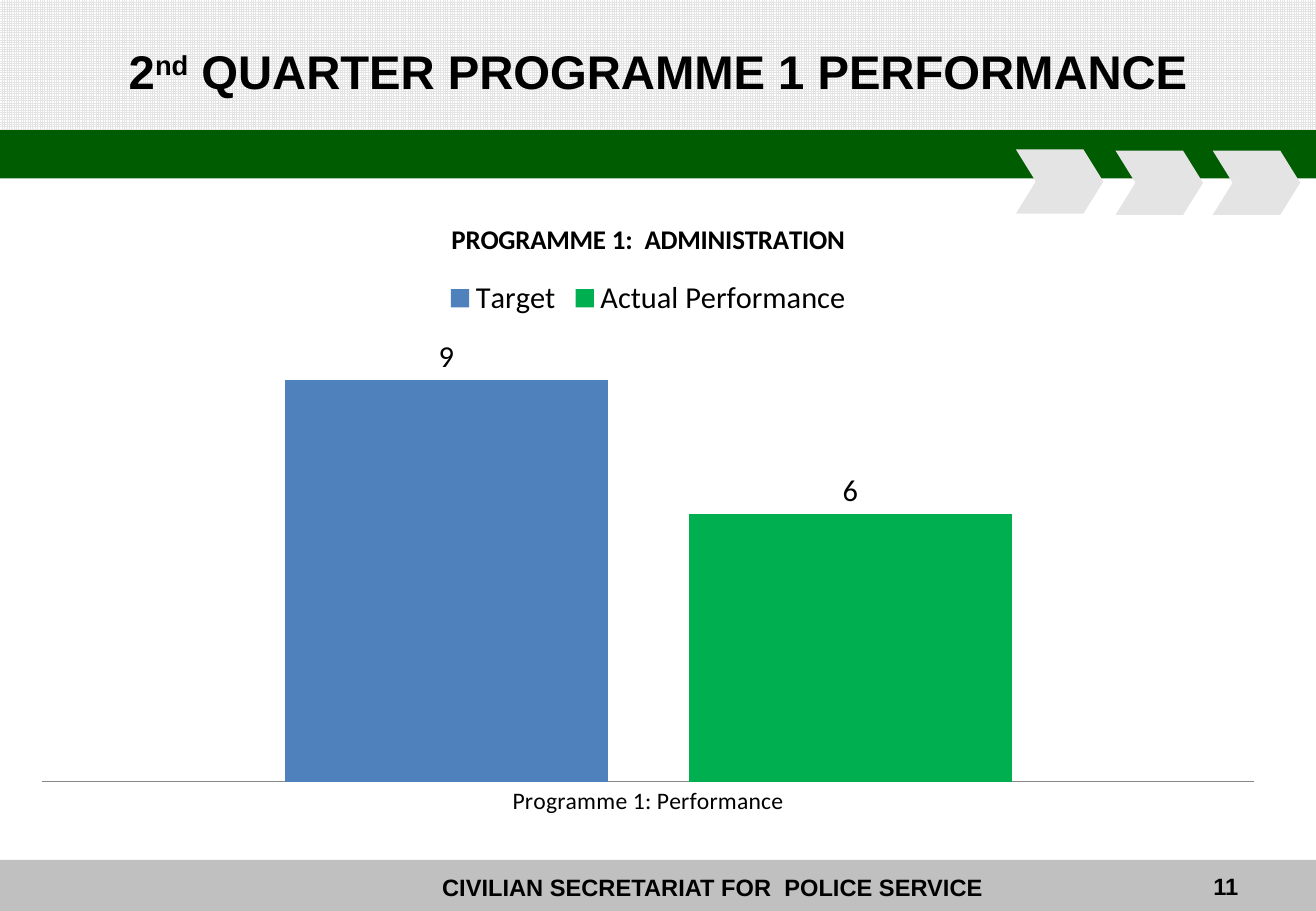
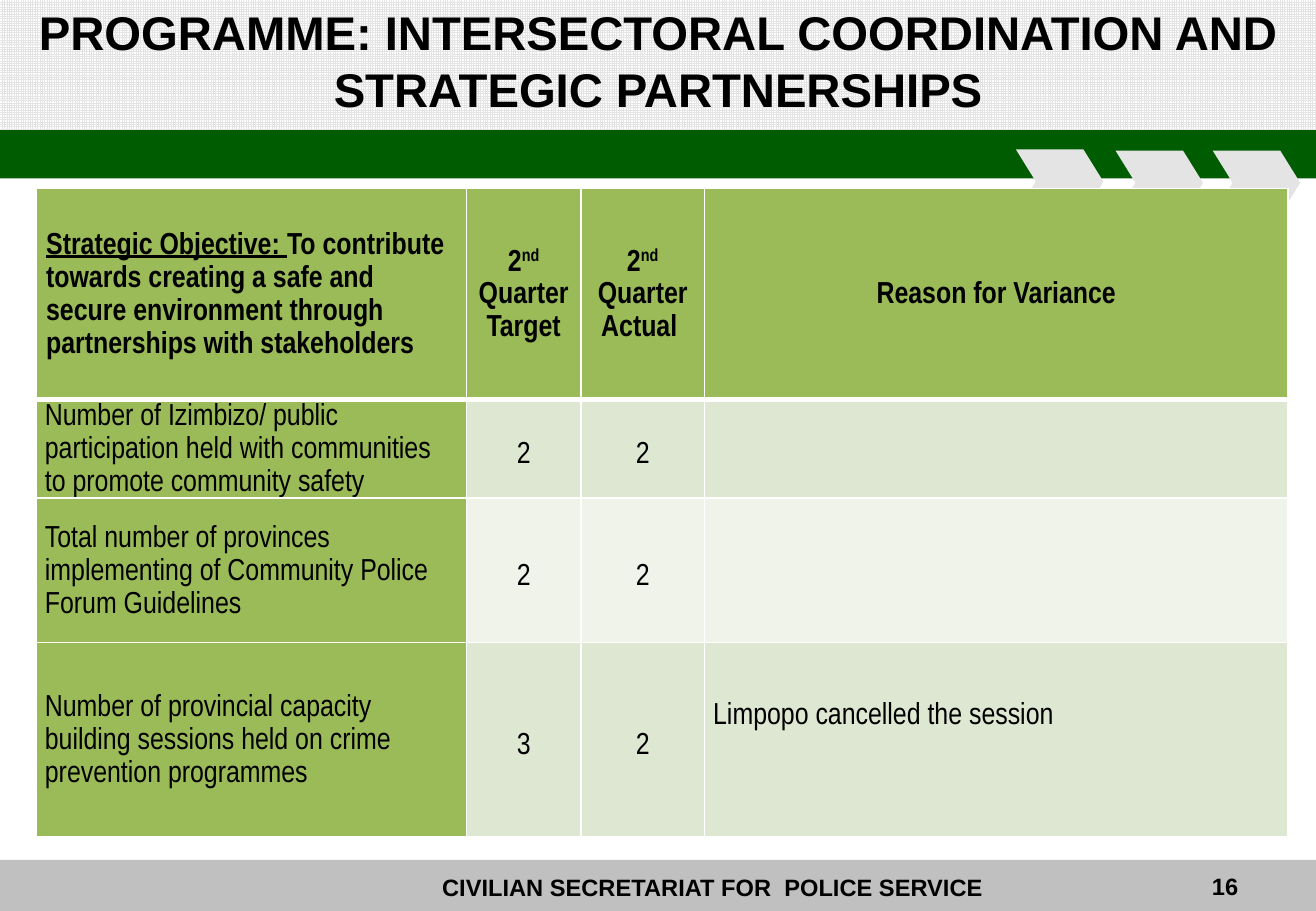
from dataclasses import dataclass

from lxml.etree import SubElement
from pptx import Presentation
from pptx.chart.data import CategoryChartData
from pptx.dml.color import RGBColor
from pptx.enum.chart import XL_CHART_TYPE as ChartType
from pptx.enum.chart import XL_LABEL_POSITION as LabelPosition
from pptx.enum.chart import XL_LEGEND_POSITION as LegendPosition
from pptx.enum.chart import XL_TICK_LABEL_POSITION as TickLabelPosition
from pptx.enum.chart import XL_TICK_MARK as TickMark
from pptx.enum.dml import MSO_PATTERN as Pattern
from pptx.enum.shapes import MSO_SHAPE as ShapeType
from pptx.enum.text import MSO_ANCHOR as Anchor
from pptx.enum.text import MSO_AUTO_SIZE as AutoSize
from pptx.enum.text import PP_ALIGN as Align
from pptx.oxml.ns import qn
from pptx.util import Inches, Pt

BLACK = RGBColor(0x00, 0x00, 0x00)
WHITE = RGBColor(0xFF, 0xFF, 0xFF)
SILVER = RGBColor(0xC0, 0xC0, 0xC0)
PALE_GREY = RGBColor(0xE4, 0xE4, 0xE4)
AXIS_GREY = RGBColor(0x87, 0x87, 0x87)
DARK_GREEN = RGBColor(0x00, 0x5C, 0x00)
OLIVE = RGBColor(0x9B, 0xBB, 0x59)
OLIVE_TINT = RGBColor(0xDE, 0xE7, 0xD1)
OLIVE_PALE = RGBColor(0xEF, 0xF3, 0xEA)
BLUE = RGBColor(0x4F, 0x81, 0xBD)
BRIGHT_GREEN = RGBColor(0x00, 0xB0, 0x50)

SLIDE_WIDTH = 10.83
SLIDE_HEIGHT = 7.5


@dataclass(frozen=True)
class Box:
    left: float
    top: float
    width: float
    height: float

    def lengths(self) -> tuple:
        return tuple(Inches(value) for value in
                     (self.left, self.top, self.width, self.height))


@dataclass(frozen=True)
class Part:
    kind: ShapeType
    box: Box
    color: RGBColor
    patterned: bool = False


@dataclass(frozen=True)
class TextRun:
    text: str
    superscript: bool = False
    underline: bool = False


@dataclass(frozen=True)
class TextStyle:
    size: float
    font: str = "Arial"
    bold: bool = True


@dataclass(frozen=True)
class Series:
    name: str
    value: int
    color: RGBColor


@dataclass(frozen=True)
class Indicator:
    name: str
    target: str
    actual: str
    reason: str = ""


TITLE_STYLE = TextStyle(28)
FOOTER_STYLE = TextStyle(14)
HEADER_STYLE = TextStyle(18, "Arial Narrow")
CELL_STYLE = TextStyle(18, "Arial Narrow", False)

CHEVRONS = [Part(ShapeType.CHEVRON, Box(left, top, 0.72, 0.53), PALE_GREY)
            for left, top in ((9.18, 1.24), (9.98, 1.24), (8.36, 1.23))]
BANDS = [
    Part(ShapeType.RECTANGLE, Box(0, 7.08, SLIDE_WIDTH, 0.42), SILVER),
    Part(ShapeType.RECTANGLE, Box(0, 1.07, SLIDE_WIDTH, 0.4), DARK_GREEN),
    *CHEVRONS,
    Part(ShapeType.RECTANGLE, Box(0, 0, SLIDE_WIDTH, 1.07), PALE_GREY, True),
]
SERIES = [Series("Target", 9, BLUE),
          Series("Actual Performance", 6, BRIGHT_GREEN)]

COLUMN_WIDTHS = (3.54, 0.94, 1.02, 4.8)
ROW_HEIGHTS = (1.74, 0.79, 1.19, 1.6)
HEADERS = [
    [TextRun("Strategic Objective: ", underline=True),
     TextRun("To contribute towards creating a safe and secure environment "
             "through partnerships with stakeholders")],
    [TextRun("2"), TextRun("nd ", True), TextRun("Quarter Target")],
    [TextRun("2"), TextRun("nd ", True), TextRun("Quarter Actual ")],
    [TextRun("Reason for Variance")],
]
INDICATORS = [
    Indicator("Number of Izimbizo/ public participation held with "
              "communities to promote community safety", "2", "2"),
    Indicator("Total number of provinces implementing of Community Police "
              "Forum Guidelines", "2", "2"),
    Indicator("Number of provincial capacity building sessions held on crime "
              "prevention programmes", "3", "2",
              "Limpopo cancelled the session"),
]


def add_runs(paragraph, runs: list[TextRun], style: TextStyle) -> None:
    for item in runs:
        run = paragraph.add_run()
        run.text = item.text
        run.font.name = style.font
        run.font.size = Pt(style.size)
        run.font.bold = style.bold
        run.font.color.rgb = BLACK
        if item.underline:
            run.font.underline = True
        if item.superscript:
            run._r.get_or_add_rPr().set("baseline", "30000")


def add_part(slide, part: Part):
    shape = slide.shapes.add_shape(part.kind, *part.box.lengths())
    shape.shadow.inherit = False
    shape.line.fill.background()
    if part.patterned:
        shape.fill.patterned()
        shape.fill.pattern = Pattern.SMALL_GRID
        shape.fill.fore_color.rgb = part.color
        shape.fill.back_color.rgb = WHITE
    else:
        shape.fill.solid()
        shape.fill.fore_color.rgb = part.color
    if part.kind == ShapeType.CHEVRON:
        shape.adjustments[0] = 0.31
    return shape


def add_text(slide, box: Box, text: str, align: Align, wrap: bool):
    shape = slide.shapes.add_textbox(*box.lengths())
    frame = shape.text_frame
    frame.word_wrap = wrap
    frame.auto_size = AutoSize.NONE if wrap else AutoSize.SHAPE_TO_FIT_TEXT
    paragraph = frame.paragraphs[0]
    paragraph.alignment = align
    add_runs(paragraph, [TextRun(text)], FOOTER_STYLE)
    return shape


def furnish_layout(layout, slide) -> None:
    for placeholder in list(layout.placeholders):
        if placeholder.placeholder_format.idx != 0:
            placeholder.element.getparent().remove(placeholder.element)
    shapes = [add_part(slide, part) for part in BANDS]
    shapes.append(add_text(slide, Box(3.54, 7.14, 4.72, 0.34),
                           "CIVILIAN SECRETARIAT FOR  POLICE SERVICE",
                           Align.LEFT, False))
    for shape in shapes:
        layout.element.cSld.spTree.append(shape.element)


def set_title(slide, box: Box, runs: list[TextRun]) -> None:
    title = slide.shapes.title
    title.left, title.top, title.width, title.height = box.lengths()
    frame = title.text_frame
    frame.word_wrap = True
    frame.auto_size = AutoSize.NONE
    frame.vertical_anchor = Anchor.TOP
    frame.margin_top = Inches(0.09)
    paragraph = frame.paragraphs[0]
    paragraph.alignment = Align.CENTER
    add_runs(paragraph, runs, TITLE_STYLE)


def add_page_number(slide, number: str) -> None:
    add_text(slide, Box(7.76, 7.13, 2.53, 0.4), number, Align.RIGHT, True)


def add_performance_chart(slide) -> None:
    data = CategoryChartData()
    data.categories = ["Programme 1: Performance"]
    for item in SERIES:
        data.add_series(item.name, [item.value])
    chart = slide.shapes.add_chart(ChartType.COLUMN_CLUSTERED,
                                   *Box(0.14, 1.62, 10.39, 5.2).lengths(),
                                   data).chart
    chart.font.name = "Calibri"
    chart.font.size = Pt(10)
    chart.font.color.rgb = BLACK

    chart.has_title = True
    paragraph = chart.chart_title.text_frame.paragraphs[0]
    add_runs(paragraph, [TextRun("PROGRAMME 1:  ADMINISTRATION")],
             TextStyle(16, "Calibri"))
    chart.chart_title.include_in_layout = False

    chart.has_legend = True
    chart.legend.position = LegendPosition.TOP
    chart.legend.include_in_layout = False
    chart.legend.font.size = Pt(18)

    chart.value_axis.visible = False
    chart.value_axis.has_major_gridlines = False
    chart.value_axis.minimum_scale = 0
    chart.value_axis.maximum_scale = 10
    category_axis = chart.category_axis
    category_axis.major_tick_mark = TickMark.NONE
    category_axis.tick_label_position = TickLabelPosition.NEXT_TO_AXIS
    category_axis.tick_labels.font.size = Pt(14)
    category_axis.format.line.color.rgb = AXIS_GREY

    plot = chart.plots[0]
    plot.vary_by_categories = False
    plot.gap_width = 150
    plot.overlap = -25
    for series, item in zip(plot.series, SERIES):
        series.format.fill.solid()
        series.format.fill.fore_color.rgb = item.color
        labels = series.data_labels
        labels.show_value = True
        labels.position = LabelPosition.OUTSIDE_END
        labels.font.size = Pt(18)


def set_borders(cell, top: float, bottom: float) -> None:
    properties = cell._tc.get_or_add_tcPr()
    widths = {"a:lnL": 1, "a:lnR": 1, "a:lnT": top, "a:lnB": bottom}
    for index, (tag, width) in enumerate(widths.items()):
        line = SubElement(properties, qn(tag), w=str(Pt(width)))
        fill = SubElement(line, qn("a:solidFill"))
        SubElement(fill, qn("a:srgbClr"), val=str(WHITE))
        properties.insert(index, line)


def fill_cell(cell, runs: list[TextRun], style: TextStyle, color: RGBColor,
              align: Align, spacing: float, inset: float) -> None:
    cell.fill.solid()
    cell.fill.fore_color.rgb = color
    cell.vertical_anchor = Anchor.MIDDLE
    cell.margin_left = cell.margin_right = Inches(inset)
    cell.margin_top = cell.margin_bottom = 0
    paragraph = cell.text_frame.paragraphs[0]
    paragraph.alignment = align
    paragraph.line_spacing = spacing
    paragraph.space_after = Pt(10)
    add_runs(paragraph, runs, style)


def add_indicator_table(slide) -> None:
    box = Box(0.3, 1.55, sum(COLUMN_WIDTHS), sum(ROW_HEIGHTS))
    table = slide.shapes.add_table(len(ROW_HEIGHTS), len(COLUMN_WIDTHS),
                                   *box.lengths()).table
    table.first_row = table.horz_banding = False
    for column, width in zip(table.columns, COLUMN_WIDTHS):
        column.width = Inches(width)
    for row, height in zip(table.rows, ROW_HEIGHTS):
        row.height = Inches(height)

    for index, runs in enumerate(HEADERS):
        cell = table.cell(0, index)
        align = Align.CENTER if index else Align.LEFT
        fill_cell(cell, runs, HEADER_STYLE, OLIVE, align, 1.15, 0.08)
        set_borders(cell, 1, 3)

    for row, item in enumerate(INDICATORS, start=1):
        tint = OLIVE_TINT if row % 2 else OLIVE_PALE
        texts = (item.name, item.target, item.actual, item.reason)
        for index, text in enumerate(texts):
            cell = table.cell(row, index)
            numeric = index in (1, 2)
            fill_cell(cell, [TextRun(text)] if text else [], CELL_STYLE,
                      tint if index else OLIVE,
                      Align.CENTER if numeric else Align.LEFT,
                      1.5 if numeric else 1.15, 0.07)
            set_borders(cell, 3 if row == 1 else 1, 1)
        if item.reason:
            table.cell(row, 3).margin_bottom = Inches(0.41)


def main() -> None:
    presentation = Presentation()
    presentation.slide_width = Inches(SLIDE_WIDTH)
    presentation.slide_height = Inches(SLIDE_HEIGHT)
    layout = presentation.slide_layouts[5]

    chart_slide = presentation.slides.add_slide(layout)
    furnish_layout(layout, chart_slide)
    set_title(chart_slide, Box(0.14, 0.26, 10.55, 0.62),
              [TextRun("2"), TextRun("nd", True),
               TextRun(" QUARTER PROGRAMME 1 PERFORMANCE")])
    add_performance_chart(chart_slide)
    add_page_number(chart_slide, "11")

    table_slide = presentation.slides.add_slide(layout)
    set_title(table_slide, Box(0.14, -0.06, 10.55, 1.25),
              [TextRun("PROGRAMME: INTERSECTORAL COORDINATION AND "
                       "STRATEGIC PARTNERSHIPS")])
    add_indicator_table(table_slide)
    add_page_number(table_slide, "16")

    presentation.save("out.pptx")


if __name__ == "__main__":
    main()
